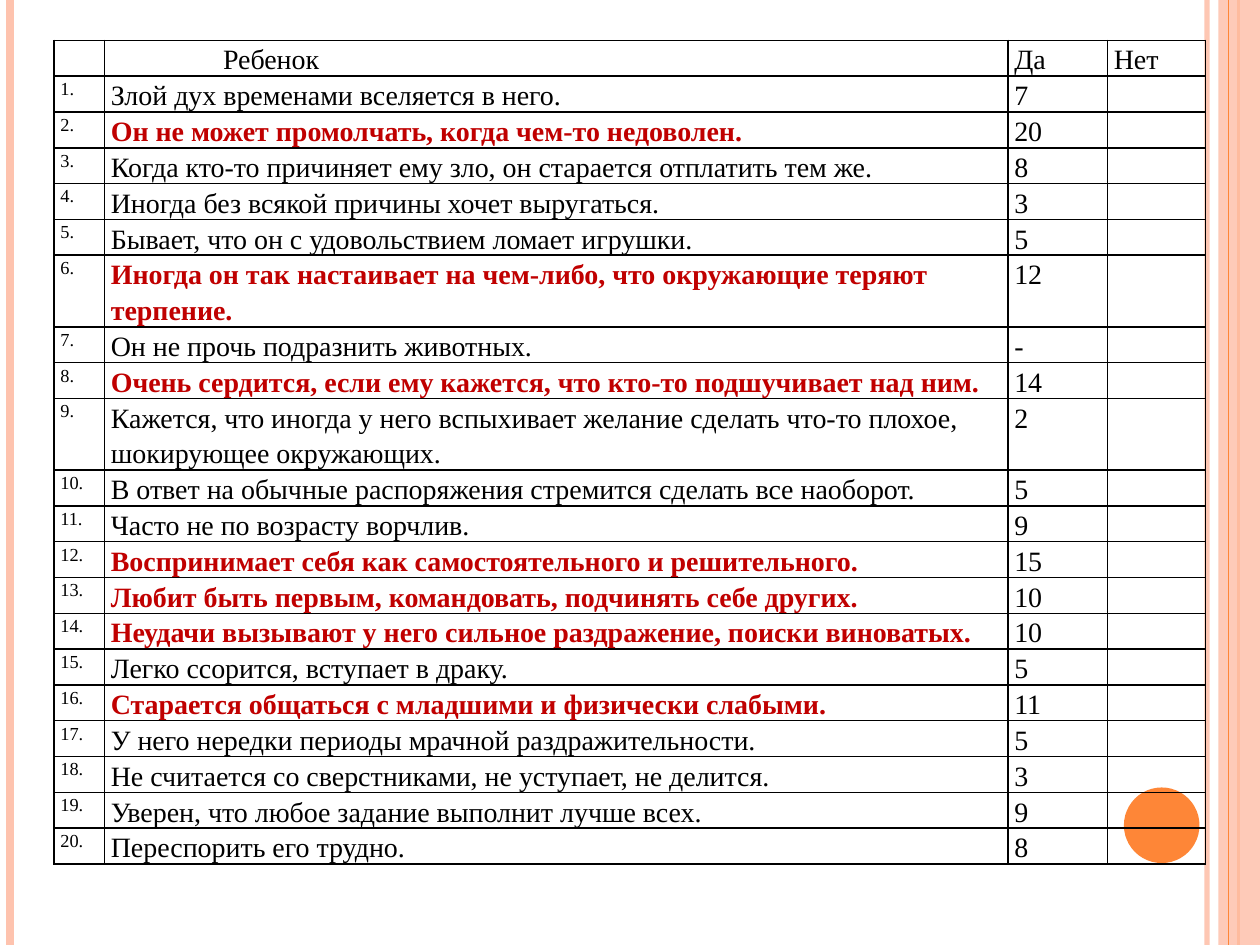
from dataclasses import dataclass

from lxml import etree
from pptx import Presentation
from pptx.dml.color import RGBColor
from pptx.enum.shapes import MSO_CONNECTOR, MSO_SHAPE
from pptx.oxml.ns import qn
from pptx.util import Emu, Inches, Pt

STRAIGHT = MSO_CONNECTOR.STRAIGHT
RECTANGLE, OVAL = MSO_SHAPE.RECTANGLE, MSO_SHAPE.OVAL


@dataclass(frozen=True)
class Theme:
    font: str = "Times New Roman"
    body_size: float = 16
    number_size: float = 10.5
    line_spacing: float = 1.15
    border_width: float = 1
    ink: str = "000000"
    highlight: str = "C00000"
    peach: str = "FEC3AE"
    orange: str = "FE8637"


THEME = Theme()
SLIDE_WIDTH, SLIDE_HEIGHT = Inches(10), Inches(7.5)

# Table grid, in inches
TABLE_LEFT, TABLE_TOP = 0.43, 0.32
COLUMN_WIDTHS = (0.4, 7.17, 0.79, 0.78)
LINE_HEIGHT = 0.28
SIDE_INSET = 0.05
HEADER_INDENT = 0.89

HEADER = ("", "Ребенок", "Да", "Нет")
# Statement, number of "yes" answers
STATEMENTS = (
    ("Злой дух временами вселяется в него.", "7"),
    ("Он не может промолчать, когда чем-то недоволен.", "20"),
    ("Когда кто-то причиняет ему зло, он старается отплатить тем же.", "8"),
    ("Иногда без всякой причины хочет выругаться.", "3"),
    ("Бывает, что он с удовольствием ломает игрушки.", "5"),
    ("Иногда он так настаивает на чем-либо, что окружающие теряют терпение.", "12"),
    ("Он не прочь подразнить животных.", "-"),
    ("Очень сердится, если ему кажется, что кто-то подшучивает над ним.", "14"),
    ("Кажется, что иногда у него вспыхивает желание сделать что-то плохое, "
     "шокирующее окружающих.", "2"),
    ("В ответ на обычные распоряжения стремится сделать все наоборот.", "5"),
    ("Часто не по возрасту ворчлив.", "9"),
    ("Воспринимает себя как самостоятельного и решительного.", "15"),
    ("Любит быть первым, командовать, подчинять себе других.", "10"),
    ("Неудачи вызывают у него сильное раздражение, поиски виноватых.", "10"),
    ("Легко ссорится, вступает в драку.", "5"),
    ("Старается общаться с младшими и физически слабыми.", "11"),
    ("У него нередки периоды мрачной раздражительности.", "5"),
    ("Не считается со сверстниками, не уступает, не делится.", "3"),
    ("Уверен, что любое задание выполнит лучше всех.", "9"),
    ("Переспорить его трудно.", "8"),
)
HIGHLIGHTED = {2, 6, 8, 12, 13, 14, 16}
TWO_LINE = {6, 9}


def set_opacity(fill_parent, percent):
    """Give the solid colour inside fill_parent an opacity."""
    color = fill_parent.find(f"{qn('a:solidFill')}/{qn('a:srgbClr')}")
    etree.SubElement(color, qn("a:alpha"), val=str(percent * 1000))


def add_vertical_rule(page, x_share, color, width, opacity=100):
    x = Emu(round(SLIDE_WIDTH * x_share))
    rule = page.shapes.add_connector(STRAIGHT, x, 0, x, SLIDE_HEIGHT)
    rule.line.color.rgb = RGBColor.from_string(color)
    rule.line.width = Pt(width)
    properties = rule._element.spPr
    if opacity < 100:
        set_opacity(properties.find(qn("a:ln")), opacity)
    etree.SubElement(properties, qn("a:effectLst"))


def add_plain_shape(page, kind, left, top, width, height, color, opacity=100):
    shape = page.shapes.add_shape(
        kind, Inches(left), Inches(top), Inches(width), Inches(height))
    shape.shadow.inherit = False
    shape.fill.solid()
    shape.fill.fore_color.rgb = RGBColor.from_string(color)
    shape.line.fill.background()
    if opacity < 100:
        set_opacity(shape._element.spPr, opacity)


def write_text(cell, text, *, size=THEME.body_size, color=THEME.ink,
               bold=False, indent=0):
    para = cell.text_frame.paragraphs[0]
    para.line_spacing = THEME.line_spacing
    if indent:
        para._p.get_or_add_pPr().set("marL", str(Inches(indent)))
    if not text:
        # An empty cell still needs a type size, or its row grows
        etree.SubElement(para._p, qn("a:endParaRPr"), sz=str(int(size * 100)))
        return
    span = para.add_run()
    span.text = text
    span.font.name = THEME.font
    span.font.size = Pt(size)
    span.font.bold = bold
    span.font.color.rgb = RGBColor.from_string(color)


def style_cell(cell):
    cell.margin_left = cell.margin_right = Inches(SIDE_INSET)
    cell.margin_top = cell.margin_bottom = 0
    properties = cell._tc.get_or_add_tcPr()
    for side in ("lnL", "lnR", "lnT", "lnB"):
        border = etree.SubElement(
            properties, qn(f"a:{side}"), w=str(Pt(THEME.border_width)))
        fill = etree.SubElement(border, qn("a:solidFill"))
        etree.SubElement(fill, qn("a:srgbClr"), val=THEME.ink)
    cell.fill.background()


def add_background(page):
    add_vertical_rule(page, 0.958, THEME.peach, 3, opacity=93)
    add_vertical_rule(page, 0.008, THEME.peach, 4.5)
    add_vertical_rule(page, 0.983, THEME.orange, 1.5)
    add_plain_shape(page, RECTANGLE, 9.67, 0, 0.33, 7.5, THEME.peach, opacity=87)
    add_vertical_rule(page, 0.975, THEME.orange, 0.75)
    add_plain_shape(page, OVAL, 8.92, 6.25, 0.6, 0.6, THEME.orange)


def add_answer_table(page):
    line_counts = [1] + [2 if number in TWO_LINE else 1
                         for number in range(1, len(STATEMENTS) + 1)]
    table = page.shapes.add_table(
        len(line_counts), len(COLUMN_WIDTHS), Inches(TABLE_LEFT), Inches(TABLE_TOP),
        Inches(sum(COLUMN_WIDTHS)), Inches(sum(line_counts) * LINE_HEIGHT)).table
    table.first_row = table.horz_banding = False
    for column, width in zip(table.columns, COLUMN_WIDTHS):
        column.width = Inches(width)
    for row, lines in zip(table.rows, line_counts):
        row.height = Inches(lines * LINE_HEIGHT)
    for cell in table.iter_cells():
        style_cell(cell)

    # Header row
    for column, title in enumerate(HEADER):
        write_text(table.cell(0, column), title,
                   indent=HEADER_INDENT if column == 1 else 0)

    # Numbered statements
    for number, (statement, yes_count) in enumerate(STATEMENTS, start=1):
        marked = number in HIGHLIGHTED
        write_text(table.cell(number, 0), f"{number}.", size=THEME.number_size)
        write_text(table.cell(number, 1), statement, bold=marked,
                   color=THEME.highlight if marked else THEME.ink)
        write_text(table.cell(number, 2), yes_count)
        write_text(table.cell(number, 3), "")


def main():
    deck = Presentation()
    deck.slide_width, deck.slide_height = SLIDE_WIDTH, SLIDE_HEIGHT
    page = deck.slides.add_slide(deck.slide_layouts[6])
    add_background(page)
    add_answer_table(page)
    deck.save("out.pptx")


if __name__ == "__main__":
    main()
